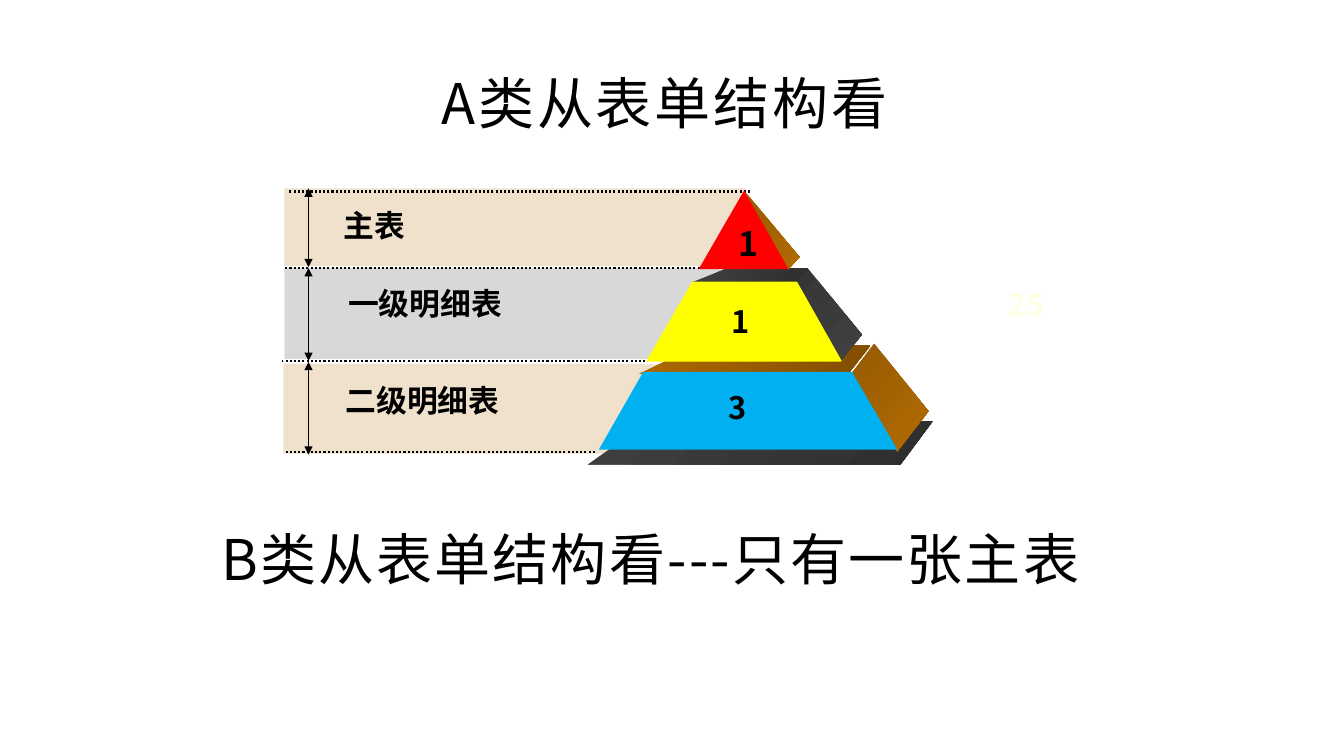
from dataclasses import dataclass

import pptx
import pptx.dml.color
import pptx.enum.dml
import pptx.enum.shapes
import pptx.enum.text
import pptx.oxml
import pptx.oxml.ns
import pptx.util
from pptx.util import Inches

ALIGN = pptx.enum.text.PP_ALIGN


@dataclass(frozen=True)
class Theme:
    font: str = "Noto Sans CJK SC"
    ink: str = "000000"
    pale: str = "FFFFE5"
    brown: str = "B26B02"
    deep_brown: str = "7F4C01"
    mid_brown: str = "975B02"
    grey: str = "404040"
    mid_grey: str = "363636"
    dark_grey: str = "2E2E2E"
    red: str = "FF0000"
    yellow: str = "FFFF00"
    blue: str = "00B0F0"
    heading: int = 40
    label: int = 22
    top_number: int = 24


THEME = Theme()

# All pyramid measures are inches from the top left corner of its box.
BANDS = [
    ((0.02, 0, 4.58, 0.77), THEME.brown),
    ((0.02, 0.79, 4.67, 0.9), THEME.grey),
    ((0.01, 1.74, 4.17, 0.89), THEME.brown),
]
DIVIDERS = [(0.06, 4.64, 0.03), (0.02, 4.14, 0.79), (0, 3.6, 1.71), (0.02, 3.1, 2.61)]
SPANS = [(0, 0.78), (0.79, 1.71), (1.72, 2.64)]
SPAN_X = 0.26
LABELS = [
    ("主表", (0.48, 0.16, 0.89, 0.5), ALIGN.LEFT),
    ("一级明细表", (0.09, 0.93, 2.65, 0.88), ALIGN.CENTER),
    ("二级明细表", (0.48, 1.9, 1.82, 0.5), ALIGN.CENTER),
]
NUMBERS = [
    ("1", (4.2, 0.32, 0.84, 0.54), THEME.top_number),
    ("1", (3.8, 1.11, 1.5, 0.5), THEME.label),
    ("3", (3.65, 1.97, 1.74, 0.5), THEME.label),
]
# Each face has one colour, or two for a gradient; back to front.
FACES = [
    ([(3.03, 2.74), (6.13, 2.74), (6.45, 2.31), (3.64, 2.31)], (THEME.grey, THEME.dark_grey)),
    ([(5.65, 1.83), (6.1, 2.61), (6.41, 2.21), (5.87, 1.54)], (THEME.mid_brown, THEME.brown)),
    ([(3.54, 1.84), (5.61, 1.84), (5.83, 1.56), (4.12, 1.56)], (THEME.brown, THEME.deep_brown)),
    ([(3.14, 2.59), (6.1, 2.59), (5.65, 1.82), (3.58, 1.82)], (THEME.blue,)),
    ([(5.54, 1.71), (5.75, 1.45), (5.21, 0.79), (5.1, 0.93)], (THEME.mid_grey, THEME.grey)),
    ([(4.07, 0.93), (5.1, 0.93), (5.21, 0.79), (4.42, 0.79)], (THEME.grey, THEME.dark_grey)),
    ([(3.62, 1.71), (5.54, 1.71), (5.1, 0.93), (4.07, 0.93)], (THEME.yellow,)),
    ([(5.02, 0.8), (5.13, 0.68), (4.58, 0.02)], (THEME.mid_brown, THEME.brown)),
    ([(4.13, 0.8), (5.02, 0.8), (4.58, 0.02)], (THEME.red,)),
]


def rgb(colour):
    return pptx.dml.color.RGBColor.from_string(colour)


def add_element(parent, tag, **attributes):
    element = pptx.oxml.parse_xml(f"<a:{tag} {pptx.oxml.ns.nsdecls('a')}/>")
    for name, value in attributes.items():
        element.set(name, value)
    parent.append(element)


def write(frame, text, size, align, colour=THEME.ink, bold=False, spacing=None):
    """Fill a text frame with one paragraph; spacing is in hundredths of a point."""
    frame.word_wrap = True
    frame.auto_size = pptx.enum.text.MSO_AUTO_SIZE.NONE
    frame.vertical_anchor = pptx.enum.text.MSO_ANCHOR.TOP
    paragraph = frame.paragraphs[0]
    paragraph.text = text
    paragraph.alignment = align
    font = paragraph.font
    font.size = pptx.util.Pt(size)
    font.bold = bold
    font.color.rgb = rgb(colour)
    font.name = THEME.font
    properties = paragraph._p.pPr.find(pptx.oxml.ns.qn("a:defRPr"))
    add_element(properties, "ea", typeface=THEME.font)
    if spacing:
        properties.set("spc", str(spacing))
    return paragraph


def set_margins(frame, side, top):
    frame.margin_left = frame.margin_right = Inches(side)
    frame.margin_top = Inches(top)
    frame.margin_bottom = Inches(0.07)


def format_heading(shape, box, text, spacing):
    shape.left, shape.top, shape.width, shape.height = map(Inches, box)
    set_margins(shape.text_frame, 0.14, 0.13)
    paragraph = write(shape.text_frame, text, THEME.heading, ALIGN.CENTER, spacing=spacing)
    paragraph.line_spacing = 0.73


def add_bold_text(slide, box, text, size=THEME.label, align=ALIGN.CENTER, colour=THEME.ink):
    frame = slide.shapes.add_textbox(*map(Inches, box)).text_frame
    set_margins(frame, 0.13, 0.02)
    write(frame, text, size, align, colour, bold=True)


def add_line(slide, start, end, width):
    line = slide.shapes.add_connector(
        pptx.enum.shapes.MSO_CONNECTOR.STRAIGHT, *map(Inches, (*start, *end)))
    line.line.color.rgb = rgb(THEME.ink)
    line.line.width = pptx.util.Pt(width)
    add_element(line._element.spPr, "effectLst")
    return line.line


def add_band(slide, box, colour):
    band = slide.shapes.add_shape(
        pptx.enum.shapes.MSO_SHAPE.RECTANGLE, *map(Inches, box))
    band.shadow.inherit = False
    band.line.fill.background()
    band.fill.solid()
    band.fill.fore_color.rgb = rgb(colour)
    tint = band._element.spPr.find(".//" + pptx.oxml.ns.qn("a:srgbClr"))
    add_element(tint, "alpha", val="20000")


def add_face(slide, points, colours):
    corners = [(Inches(x), Inches(y)) for x, y in points]
    builder = slide.shapes.build_freeform(*corners[0])
    builder.add_line_segments(corners[1:], close=True)
    face = builder.convert_to_shape()
    face.shadow.inherit = False
    face.line.fill.background()
    if len(colours) == 1:
        face.fill.solid()
        face.fill.fore_color.rgb = rgb(colours[0])
    else:
        face.fill.gradient()
        face.fill.gradient_angle = 315
        for stop, colour in zip(face.fill.gradient_stops, colours):
            stop.color.rgb = rgb(colour)
    return face


def add_pyramid(slide, left, top):
    """Place the bands, rules, labels and faces of the three-level pyramid."""
    def placed(box):
        return (left + box[0], top + box[1], *box[2:])

    for box, colour in BANDS:
        add_band(slide, placed(box), colour)
    for start, end, y in DIVIDERS:
        divider = add_line(slide, placed((end, y)), placed((start, y)), 1.5)
        divider.dash_style = pptx.enum.dml.MSO_LINE.ROUND_DOT
    for start, end in SPANS:
        span = add_line(slide, placed((SPAN_X, start)), placed((SPAN_X, end)), 0.75)
        for tip in ("headEnd", "tailEnd"):
            add_element(span._get_or_add_ln(), tip, type="triangle")
    for text, box, align in LABELS:
        add_bold_text(slide, placed(box), text, align=align)
    for points, colours in FACES:
        face = add_face(slide, [placed(point) for point in points], colours)
        if colours == (THEME.yellow,):
            face.line.color.rgb = rgb(THEME.yellow)
            face.line.width = pptx.util.Pt(1)
    for text, box, size in NUMBERS:
        add_bold_text(slide, placed(box), text, size)


def main():
    deck = pptx.Presentation()
    deck.slide_width, deck.slide_height = Inches(13.33), Inches(7.5)
    slide = deck.slides.add_slide(deck.slide_layouts[5])
    add_bold_text(slide, (9.68, 2.81, 1, 0.5), "25", colour=THEME.pale)
    add_pyramid(slide, 2.8, 1.87)
    format_heading(slide.shapes.title, (2.1, 0.72, 8.98, 0.96), "A类从表单结构看", 210)
    conclusion = slide.shapes.add_textbox(0, 0, 0, 0)
    format_heading(conclusion, (1.96, 5.24, 8.98, 0.96), "B类从表单结构看---只有一张主表", 160)
    deck.save("out.pptx")


if __name__ == "__main__":
    main()
